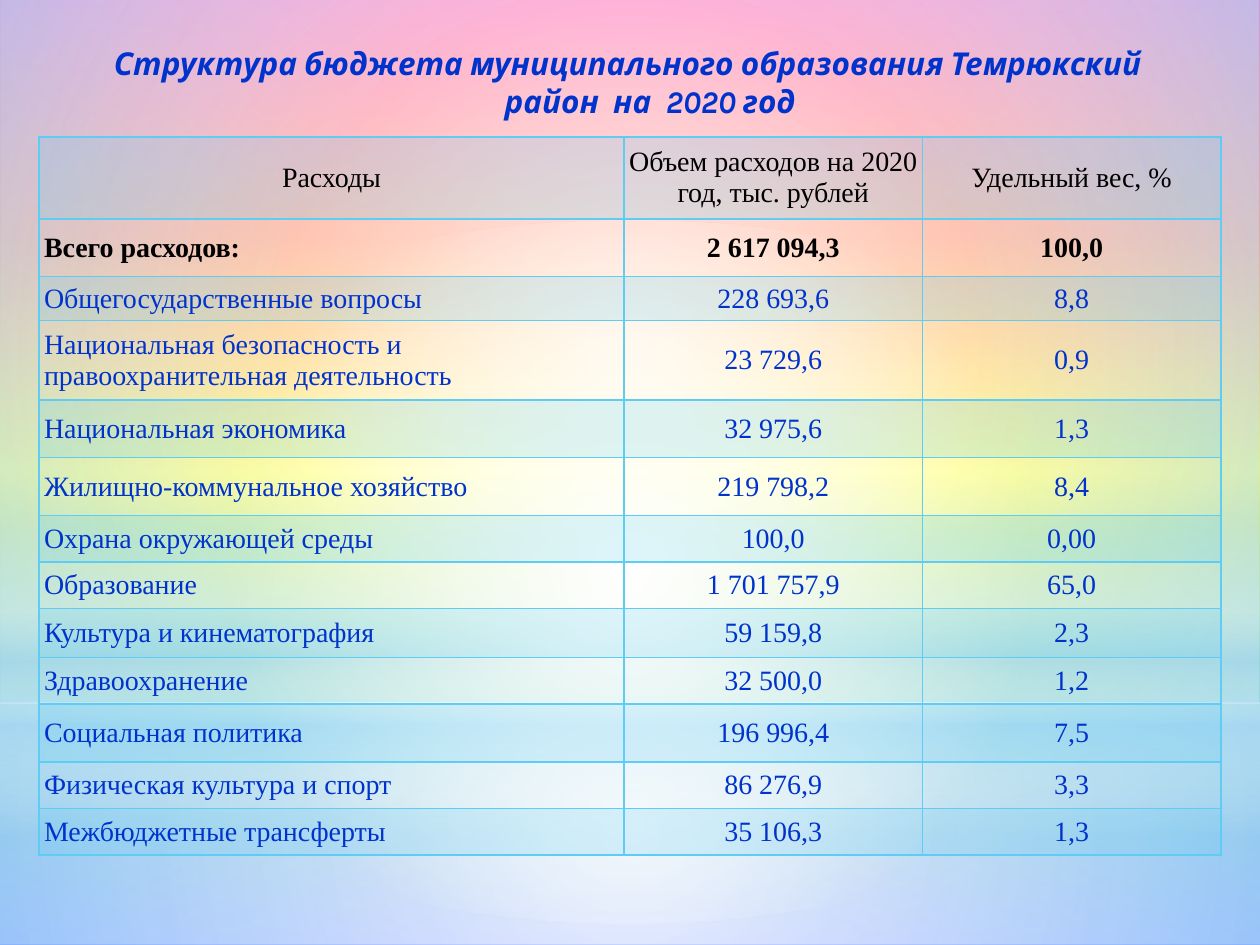
from lxml import etree
from pptx import Presentation
from pptx import util as u
from pptx.dml.color import RGBColor
from pptx.enum import shapes, text
from pptx.oxml import ns

WIDTH, HEIGHT = u.Inches(10), u.Inches(7.5)
BLUE, SKY, BLACK, WHITE, PALE = "0033CC", "5ECCF3", "000000", "FFFFFF", "B4DCFA"
RAINBOW = [(0, "FF3399", 100), (25, "FF6633", 100), (50, "FFFF00", 100),
           (75, "01A78F", 100), (100, "3366FF", 100)]
RECT, OVAL = shapes.MSO_SHAPE.RECTANGLE, shapes.MSO_SHAPE.OVAL
VEILS = [
    (RECT, (0, 0.744, 1, 0.256), True, [(0, WHITE, 91), (37, WHITE, 76), (100, PALE, 79)]),
    (RECT, (0, 0, 1, 0.744), True, [(0, WHITE, 89), (48, WHITE, 62), (100, PALE, 79)]),
    (RECT, (0, 0.55, 1, 0.333), False, [(0, WHITE, 0), (29, WHITE, 30), (45, PALE, 40),
                                        (55, WHITE, 26), (65, PALE, 60), (100, WHITE, 0)]),
    (OVAL, (0, 0.233, 1, 0.744), True, [(0, WHITE, 100), (56, WHITE, 0)]),
]
HEADING = "Структура бюджета муниципального образования Темрюкский район  на  2020 год"
EXPENSES = [
    (0.65, "Расходы", "Объем расходов на 2020 год, тыс. рублей", "Удельный вес, %"),
    (0.46, "Всего расходов:", "2 617 094,3", "100,0"),
    (0.35, "Общегосударственные вопросы", "228 693,6", "8,8"),
    (0.63, "Национальная безопасность и правоохранительная деятельность", "23 729,6", "0,9"),
    (0.46, "Национальная экономика", "32 975,6", "1,3"),
    (0.46, "Жилищно-коммунальное хозяйство", "219 798,2", "8,4"),
    (0.37, "Охрана окружающей среды", "100,0", "0,00"),
    (0.37, "Образование", "1 701 757,9", "65,0"),
    (0.39, "Культура и кинематография", "59 159,8", "2,3"),
    (0.37, "Здравоохранение", "32 500,0", "1,2"),
    (0.46, "Социальная политика", "196 996,4", "7,5"),
    (0.37, "Физическая культура и спорт", "86 276,9", "3,3"),
    (0.37, "Межбюджетные трансферты", "35 106,3", "1,3"),
]
COLUMN_SHARES = (0.495, 0.2525, 0.2525)


def place(box):
    """Turn shares of the slide into left, top, width and height."""
    left, top, width, height = box
    return [int(WIDTH * left), int(HEIGHT * top), int(WIDTH * width), int(HEIGHT * height)]


def colour(value):
    """Read a hex string as a colour."""
    return RGBColor.from_string(value)


def add_node(parent, tag, **attributes):
    """Append a drawing element with its attributes."""
    node = etree.SubElement(parent, ns.qn("a:" + tag))
    for key, value in attributes.items():
        node.set(key, str(value))
    return node


def add_colour(parent, value, opacity=100):
    """Append a colour element with its opacity in percent."""
    add_node(add_node(parent, "srgbClr", val=value), "alpha", val=opacity * 1000)


def paint_gradient(fill, owner, stops, radial=False):
    """Fill with the stops, from the centre outwards or from top to bottom."""
    fill.gradient()
    gradient = owner.find(".//" + ns.qn("a:gradFill"))
    for child in list(gradient):
        gradient.remove(child)
    stop_list = add_node(gradient, "gsLst")
    for position, value, opacity in stops:
        add_colour(add_node(stop_list, "gs", pos=position * 1000), value, opacity)
    if radial:
        centre = add_node(gradient, "path", path="circle")
        add_node(centre, "fillToRect", l=50000, t=50000, r=50000, b=50000)
    else:
        add_node(gradient, "lin", ang=5400000, scaled=0)


def write(frame, words, size=16, font="Times New Roman", value=BLACK, bold=False,
          italic=False, align=text.PP_ALIGN.CENTER):
    """Write one formatted paragraph into a text frame."""
    paragraph = frame.paragraphs[0]
    paragraph.alignment = align
    run = paragraph.add_run()
    run.text = words
    run.font.size, run.font.name = u.Pt(size), font
    run.font.bold, run.font.italic = bold, italic
    run.font.color.rgb = colour(value)
    return paragraph


def build_backdrop(slide):
    """Lay the rainbow and the translucent veils."""
    paint_gradient(slide.background.fill, slide.element, RAINBOW)
    for kind, box, radial, stops in VEILS:
        veil = slide.shapes.add_shape(kind, *place(box))
        veil.shadow.inherit = False
        veil.line.fill.background()
        paint_gradient(veil.fill, veil.element, stops, radial)


def build_heading(slide, box):
    """Set the title in its placeholder above the veils."""
    heading = slide.shapes.title
    heading.element.getparent().append(heading.element)
    heading.left, heading.top, heading.width, heading.height = place(box)
    frame = heading.text_frame
    frame.word_wrap, frame.auto_size = True, text.MSO_AUTO_SIZE.NONE
    frame.vertical_anchor = text.MSO_ANCHOR.TOP
    paragraph = write(frame, HEADING, size=18, font="Karla", value=BLUE, bold=True, italic=True)
    properties = paragraph._p.get_or_add_pPr()
    properties.set("marL", str(u.Inches(0.35)))
    properties.set("indent", str(u.Inches(-0.35)))


def style_cell(cell, shaded):
    """Give a cell its margins, borders and fill."""
    cell.margin_left = cell.margin_right = u.Inches(0.04)
    cell.margin_top = cell.margin_bottom = 0
    cell.vertical_anchor = text.MSO_ANCHOR.MIDDLE
    properties = cell._tc.get_or_add_tcPr()
    for side in ("lnL", "lnR", "lnT", "lnB"):
        add_colour(add_node(add_node(properties, side, w=u.Pt(1)), "solidFill"), SKY)
    if shaded:
        add_colour(add_node(properties, "solidFill"), SKY, 20)
    else:
        cell.fill.background()


def build_expenses(slide, box):
    """Place the expense table with every other row shaded."""
    left, top, width, height = place(box)
    table = slide.shapes.add_table(len(EXPENSES), len(COLUMN_SHARES), left, top, width, height).table
    for column, share in zip(table.columns, COLUMN_SHARES):
        column.width = int(width * share)
    units = sum(row[0] for row in EXPENSES)
    for number, (unit, *entries) in enumerate(EXPENSES):
        table.rows[number].height = int(height * unit / units)
        for place_in_row, entry in enumerate(entries):
            cell = table.cell(number, place_in_row)
            style_cell(cell, number % 2 == 0)
            is_label = number > 0 and place_in_row == 0
            write(cell.text_frame, entry, value=BLACK if number < 2 else BLUE, bold=number == 1,
                  align=text.PP_ALIGN.LEFT if is_label else text.PP_ALIGN.CENTER)


def main():
    """Build the budget slide and save it."""
    deck = Presentation()
    deck.slide_width, deck.slide_height = WIDTH, HEIGHT
    slide = deck.slides.add_slide(deck.slide_layouts[5])
    build_backdrop(slide)
    build_heading(slide, (0.047, 0.04, 0.903, 0.085))
    build_expenses(slide, (0.031, 0.145, 0.938, 0.76))
    deck.save("out.pptx")


if __name__ == "__main__":
    main()
